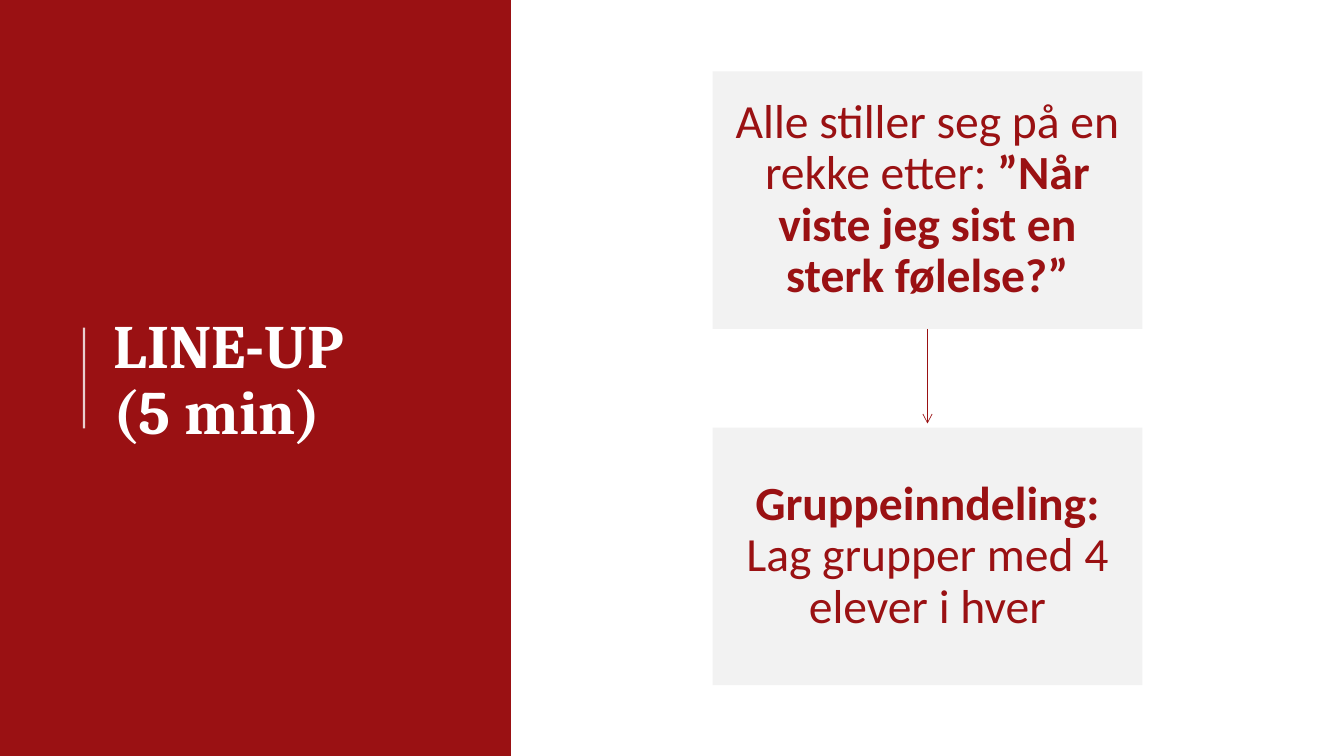
from lxml import etree
from pptx import Presentation
from pptx.dml.color import RGBColor
from pptx.enum import shapes, text
from pptx.oxml import ns
from pptx.util import Pt

RED, WHITE, GREY = "9A1113", "FFFFFF", "F2F2F2"


def colour(value):
    return RGBColor.from_string(value)


class SlideBuilder:
    heading_font, body_font = "Cambria", "Calibri"
    heading_size, body_size = 44, 34
    line_spacing = 0.9

    def __init__(self, slide):
        self.slide = slide

    def style_run(self, run, font, size, fill, bold):
        run.font.name, run.font.size, run.font.bold = font, Pt(size), bold
        run.font.color.rgb = colour(fill)

    def panel(self, left, top, width, height, fill):
        panel = self.slide.shapes.add_shape(
            shapes.MSO_SHAPE.RECTANGLE, Pt(left), Pt(top), Pt(width), Pt(height))
        panel.shadow.inherit = False
        panel.fill.solid()
        panel.fill.fore_color.rgb = colour(fill)
        panel.line.fill.background()
        return panel

    def title(self, wording, left, top, width, height):
        title = self.slide.shapes.title
        title.left, title.top, title.width, title.height = map(Pt, (left, top, width, height))
        frame = title.text_frame
        frame.word_wrap = True
        frame.auto_size = text.MSO_AUTO_SIZE.NONE
        frame.vertical_anchor = text.MSO_ANCHOR.MIDDLE
        heading = frame.paragraphs[0]
        heading.text = wording
        heading.alignment = text.PP_ALIGN.LEFT
        heading.line_spacing = self.line_spacing
        for run in heading.runs:
            self.style_run(run, self.heading_font, self.heading_size, WHITE, True)

    def step(self, parts, left, top, width, height):
        frame = self.panel(left, top, width, height, GREY).text_frame
        frame.word_wrap = True
        frame.vertical_anchor = text.MSO_ANCHOR.MIDDLE
        frame.margin_left = frame.margin_right = Pt(15)
        frame.margin_top = frame.margin_bottom = Pt(16)
        instruction = frame.paragraphs[0]
        instruction.alignment = text.PP_ALIGN.CENTER
        instruction.line_spacing = self.line_spacing
        for wording, bold in parts:
            run = instruction.add_run()
            run.text = wording
            self.style_run(run, self.body_font, self.body_size, RED, bold)

    def line(self, x, start, end, stroke, weight, opacity=100, arrow=False):
        line = self.slide.shapes.add_connector(
            shapes.MSO_CONNECTOR.STRAIGHT, Pt(x), Pt(start), Pt(x), Pt(end))
        line.line.color.rgb = colour(stroke)
        line.line.width = Pt(weight)
        properties = line._element.spPr
        if opacity < 100:
            solid = properties.find(".//" + ns.qn("a:srgbClr"))
            etree.SubElement(solid, ns.qn("a:alpha"), val=str(opacity * 1000))
        if arrow:
            etree.SubElement(properties.find(ns.qn("a:ln")), ns.qn("a:tailEnd"), type="arrow")
        etree.SubElement(properties, ns.qn("a:effectLst"))


def main():
    deck = Presentation()
    deck.slide_width, deck.slide_height = Pt(960), Pt(540)
    builder = SlideBuilder(deck.slides.add_slide(deck.slide_layouts[5]))

    # Title panel
    builder.panel(0, 0, 365, 540, RED)
    builder.line(60, 306, 234, WHITE, 1.5, opacity=80)
    builder.title("LINE-UP\n(5 min)", 74, 56, 266, 433)
    title = builder.slide.shapes.title._element
    title.getparent().append(title)  # bring the title in front of its panel

    # Steps joined by an arrow
    left, top, width, height, gap = 509, 51, 307, 184, 70.5
    steps = [
        [("Alle stiller seg på en rekke etter: ", False),
         ("”Når viste jeg sist en sterk følelse?”", True)],
        [("Gruppeinndeling:", True), (" Lag grupper med 4 elever i hver", False)],
    ]
    for index, parts in enumerate(steps):
        step_top = top + index * (height + gap)
        if index:
            builder.line(left + width / 2, step_top - gap, step_top - 3, RED, 0.5, arrow=True)
        builder.step(parts, left, step_top, width, height)

    deck.save("out.pptx")


if __name__ == "__main__":
    main()
